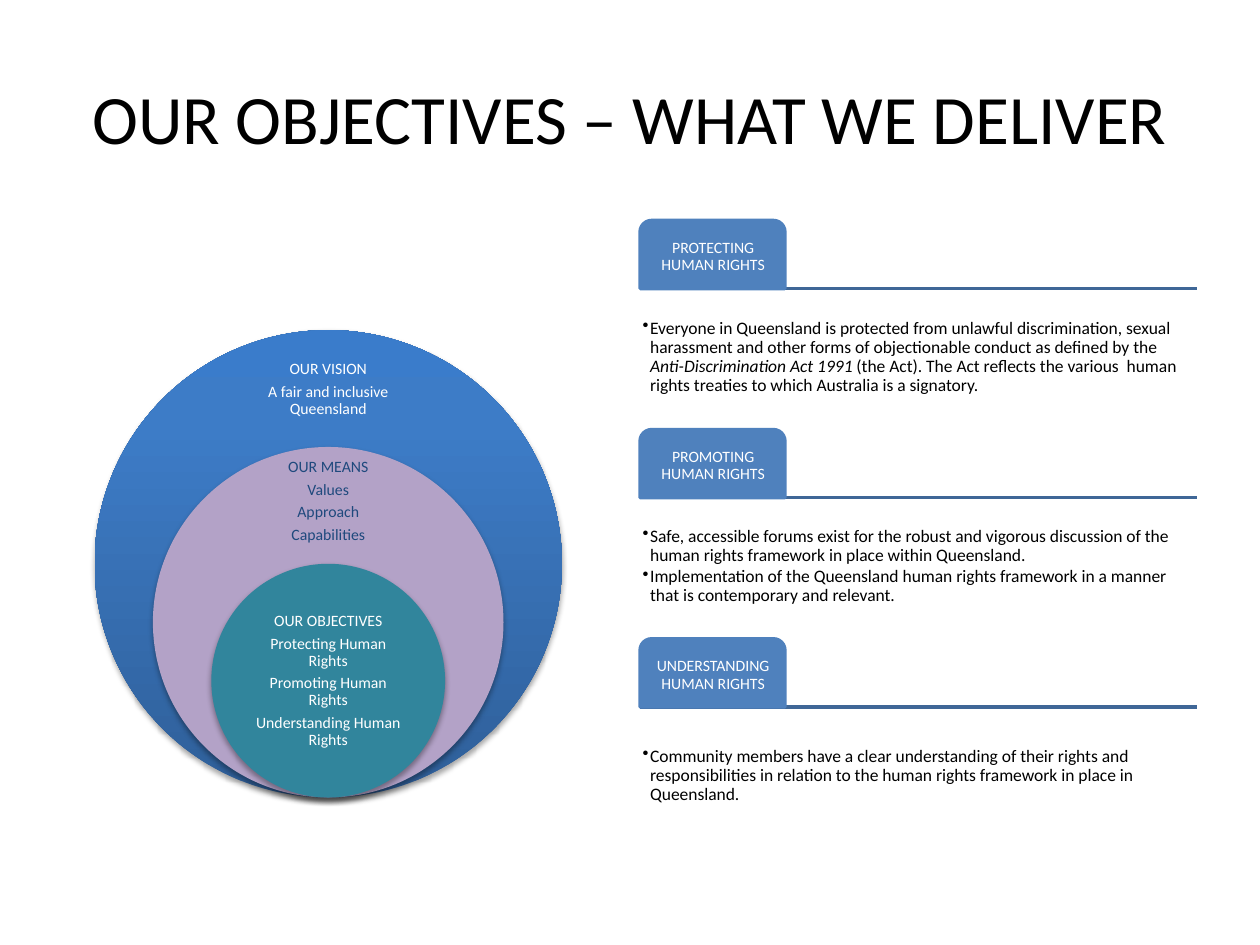
from copy import deepcopy

from lxml.etree import SubElement
from pptx import Presentation
from pptx.dml.color import RGBColor
from pptx.enum.shapes import MSO_CONNECTOR, MSO_SHAPE as SHAPE
from pptx.enum.text import MSO_ANCHOR, MSO_AUTO_SIZE, PP_ALIGN
from pptx.oxml import parse_xml
from pptx.oxml.ns import nsdecls, qn
from pptx.util import Inches, Pt

BLACK = RGBColor(0x00, 0x00, 0x00)
WHITE = RGBColor(0xFF, 0xFF, 0xFF)
NAVY = RGBColor(0x1F, 0x49, 0x7D)
LILAC = RGBColor(0xB3, 0xA2, 0xC7)
TEAL = RGBColor(0x31, 0x85, 0x9C)
TAB_BLUE = RGBColor(0x4F, 0x81, 0xBD)
RULE_BLUE = RGBColor(0x3F, 0x67, 0x97)
VISION_STOPS = [
    (0, RGBColor(0x2F, 0x5F, 0x99)),
    (0.8, RGBColor(0x3D, 0x7C, 0xC7)),
    (1, RGBColor(0x3A, 0x7C, 0xCB)),
]

TITLE = "OUR OBJECTIVES – WHAT WE DELIVER"
CIRCLES = [
    dict(scale=1, fill=None, color=WHITE, top=2.81, height=0.56,
         lines=["OUR VISION", "A fair and inclusive Queensland"]),
    dict(scale=0.75, fill=LILAC, color=NAVY, top=3.72, height=0.52,
         lines=["OUR MEANS", "Values", "Approach", "Capabilities"]),
    dict(scale=0.5, fill=TEAL, color=WHITE, top=4.94, height=0.93,
         lines=["OUR OBJECTIVES", "Protecting Human Rights",
                "Promoting Human Rights", "Understanding Human Rights"]),
]
ACT = "Anti-Discrimination Act 1991 "
SECTIONS = [
    ("PROTECTING HUMAN RIGHTS", [
        "Everyone in Queensland is protected from unlawful discrimination, sexual "
        "harassment and other forms of objectionable conduct as defined by the "
        + ACT + "(the Act). The Act reflects the various  human rights treaties "
        "to which Australia is a signatory."]),
    ("PROMOTING HUMAN RIGHTS", [
        "Safe, accessible forums exist for the robust and vigorous discussion of "
        "the human rights framework in place within Queensland.",
        "Implementation of the Queensland human rights framework in a manner that "
        "is contemporary and relevant."]),
    ("UNDERSTANDING HUMAN RIGHTS", [
        "Community members have a clear understanding of their rights and "
        "responsibilities in relation to the human rights framework in place in "
        "Queensland."]),
]

CENTER_X, CIRCLE_BOTTOM, DIAMETER = 2.605, 6.33, 3.71
LEFT, RIGHT, FIRST_TOP, PITCH = 5.08, 9.5, 1.75, 1.66
TAB_WIDTH, TAB_HEIGHT, BODY_HEIGHT = 1.15, 0.54, 1.09


def add_text(slide, box, lines, size=9, color=WHITE, align=PP_ALIGN.CENTER,
             inset=0.02, after=3.15, bullet=False, italic=ACT):
    frame = slide.shapes.add_textbox(*map(Inches, box)).text_frame
    frame.word_wrap = True
    frame.vertical_anchor = MSO_ANCHOR.MIDDLE
    frame.margin_left = frame.margin_right = Inches(inset)
    frame.margin_top = frame.margin_bottom = Inches(inset)
    for index, line in enumerate(lines):
        paragraph = frame.add_paragraph() if index else frame.paragraphs[0]
        paragraph.alignment = align
        paragraph.line_spacing = 0.9
        paragraph.space_after = Pt(after)
        if bullet:
            props = paragraph._p.get_or_add_pPr()
            props.set("marL", str(Inches(0.06)))
            props.set("indent", str(-Inches(0.06)))
            SubElement(props, qn("a:buChar")).set("char", "•")
        before, phrase, rest = line.partition(italic)
        for part in filter(None, (before, phrase, rest)):
            run = paragraph.add_run()
            run.text = part
            run.font.name = "Calibri"
            run.font.size = Pt(size)
            run.font.color.rgb = color
            run.font.italic = part == italic


def fill_gradient(shape, stops):
    shape.fill.gradient()
    shape.fill.gradient_angle = 90
    stop_list = shape._element.spPr.find(qn("a:gradFill")).find(qn("a:gsLst"))
    stop_list.insert(1, deepcopy(stop_list[0]))
    for stop, (position, color) in zip(shape.fill.gradient_stops, stops):
        stop.position = position
        stop.color.rgb = color


def add_circle(slide, scale, fill, color, top, height, lines):
    size = DIAMETER * scale
    circle = slide.shapes.add_shape(
        SHAPE.OVAL, Inches(CENTER_X - size / 2), Inches(CIRCLE_BOTTOM - size),
        Inches(size), Inches(size))
    if fill is None:
        fill_gradient(circle, VISION_STOPS)
    else:
        circle.fill.solid()
        circle.fill.fore_color.rgb = fill
    circle.line.fill.background()
    circle._element.spPr.append(parse_xml(
        f'<a:effectLst {nsdecls("a")}><a:outerShdw blurRad="{Pt(3.1)}" '
        f'dist="{Pt(1.8)}" dir="5400000" rotWithShape="0"><a:srgbClr val="000000">'
        '<a:alpha val="35000"/></a:srgbClr></a:outerShdw></a:effectLst>'))
    add_text(slide, (CENTER_X - 0.65, top, 1.3, height), lines,
             color=color, inset=0.07)


def add_rule(slide, y):
    rule = slide.shapes.add_connector(
        MSO_CONNECTOR.STRAIGHT, *map(Inches, (LEFT, y, RIGHT, y)))
    rule.line.color.rgb = RULE_BLUE
    rule.line.width = Pt(2)
    SubElement(rule._element.spPr, qn("a:effectLst"))


def add_section(slide, top, heading, points):
    base = top + TAB_HEIGHT
    add_rule(slide, base)
    tab = slide.shapes.add_shape(
        SHAPE.ROUND_2_SAME_RECTANGLE,
        *map(Inches, (LEFT, top, TAB_WIDTH, TAB_HEIGHT)))
    tab.adjustments[0], tab.adjustments[1] = 0.17, 0
    tab.shadow.inherit = False
    tab.fill.solid()
    tab.fill.fore_color.rgb = TAB_BLUE
    tab.line.color.rgb = TAB_BLUE
    tab.line.width = Pt(2)
    add_text(slide, (LEFT + 0.03, top + 0.03, 1.1, 0.52), [heading])
    add_text(slide, (LEFT, base, RIGHT - LEFT, BODY_HEIGHT), points, size=10,
             color=BLACK, align=PP_ALIGN.LEFT, after=1.5, bullet=True)


def main():
    """Build the objectives slide and save it."""
    deck = Presentation()
    deck.slide_width, deck.slide_height = Inches(10), Inches(7.5)
    slide = deck.slides.add_slide(deck.slide_layouts[5])
    title = slide.shapes.title
    title.left, title.top = Inches(0.5), Inches(0.3)
    title.width, title.height = Inches(9), Inches(1.25)
    title.text_frame.text = TITLE
    title.text_frame.auto_size = MSO_AUTO_SIZE.NONE
    title.text_frame.vertical_anchor = MSO_ANCHOR.MIDDLE
    heading = title.text_frame.paragraphs[0]
    heading.alignment = PP_ALIGN.CENTER
    heading.font.name = "Calibri"
    heading.font.size = Pt(39.6)
    heading.font.color.rgb = BLACK
    for circle in CIRCLES:
        add_circle(slide, **circle)
    for index, (name, points) in enumerate(SECTIONS):
        add_section(slide, FIRST_TOP + index * PITCH, name, points)
    deck.save("out.pptx")


if __name__ == "__main__":
    main()
